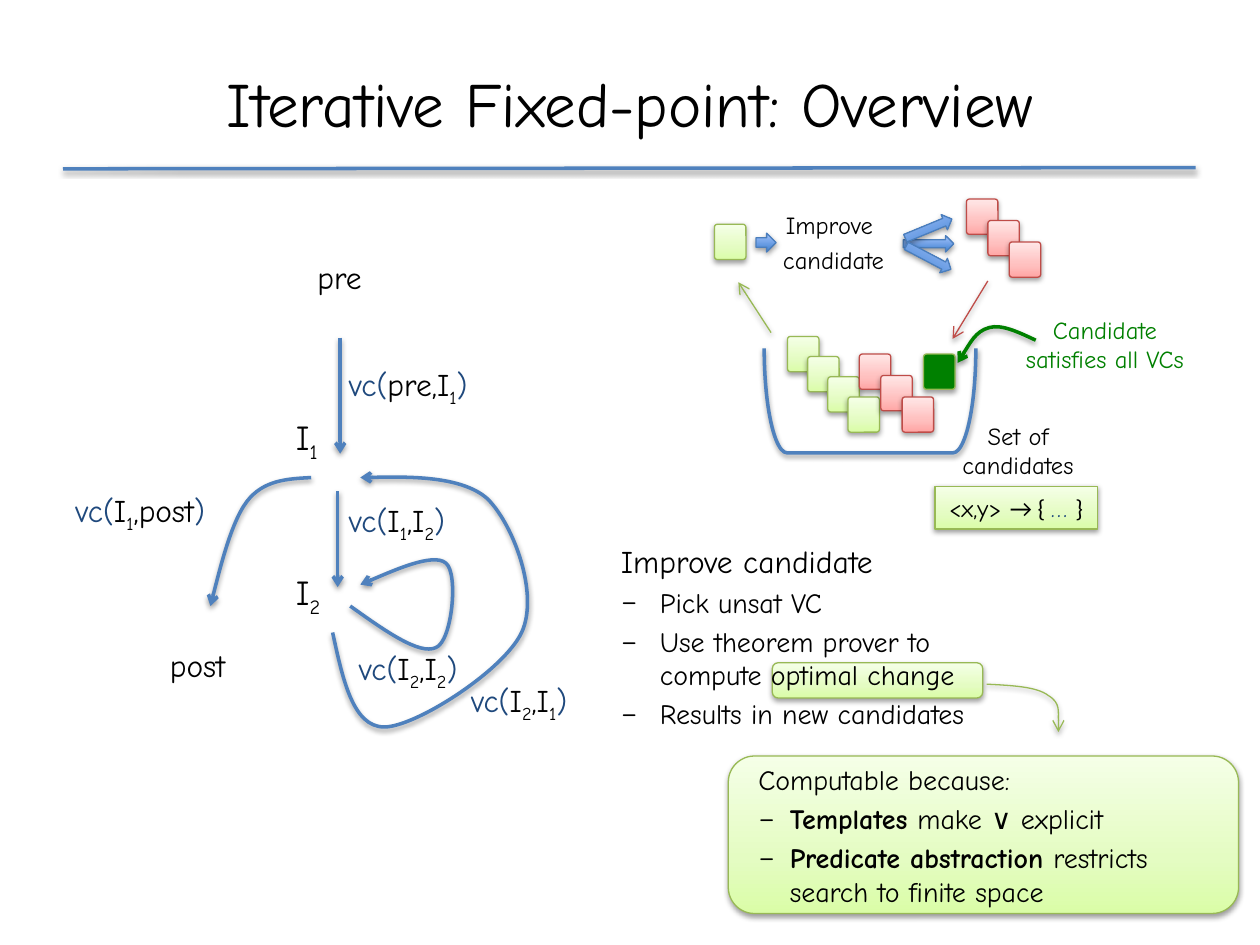
from itertools import groupby

from lxml.etree import SubElement
from pptx import Presentation
from pptx.dml.color import RGBColor
from pptx.enum.shapes import MSO_CONNECTOR, MSO_SHAPE as Shape
from pptx.enum.text import MSO_ANCHOR as Anchor, PP_ALIGN as Align
from pptx.oxml.ns import qn
from pptx.util import Inches, Pt

FONT = "Comic Neue"
BLACK, BLUE, NAVY, DARK_GREEN = "000000", "4F81BD", "1F497D", "008000"
GREEN_EDGE, RED_EDGE, ARROW_EDGE = "98B955", "BF4C48", "4B7EBC"
GREEN = [(0, "DAFDA7"), (35, "E4FCC2"), (100, "F5FFE7")]
RED = [(0, "FFA6A5"), (35, "FFC0BF"), (100, "FFE7E7")]
BLUE_FADE = [(0, "3F80CE"), (100, "A4C4FF")]


def rgb(value):
    return RGBColor.from_string(value)


# Shared drawing helpers
def add_xml(parent, tag, **attributes):
    return SubElement(parent, qn(tag), {k: str(v) for k, v in attributes.items()})


def style_line(part, color, width, arrow=False):
    part.line.color.rgb = rgb(color)
    part.line.width = Pt(width)
    properties = part._element.spPr
    if arrow:
        add_xml(properties.find(qn("a:ln")), "a:tailEnd", type="arrow")
    effects = add_xml(properties, "a:effectLst")
    shadow = add_xml(effects, "a:outerShdw", blurRad=Pt(3.1), dist=Pt(1.6),
                     dir=5400000, rotWithShape=0)
    add_xml(add_xml(shadow, "a:srgbClr", val=BLACK), "a:alpha", val=38000)


def add_block(slide, kind, x, y, w, h, fill, edge, width=0.75, adjust=None, turn=0):
    block = slide.shapes.add_shape(kind, Inches(x), Inches(y), Inches(w), Inches(h))
    block.rotation = turn
    if adjust is not None:
        block.adjustments[0] = adjust
    if fill is None:
        block.fill.background()
    elif isinstance(fill, str):
        block.fill.solid()
        block.fill.fore_color.rgb = rgb(fill)
    else:
        block.fill.gradient()
        block.fill.gradient_angle = 90
        stops = block._element.spPr.find(qn("a:gradFill")).find(qn("a:gsLst"))
        stops.clear()
        for position, color in fill:
            add_xml(add_xml(stops, "a:gs", pos=position * 1000), "a:srgbClr", val=color)
    style_line(block, edge, width)
    return block


def add_straight(slide, x1, y1, x2, y2, color=BLUE, width=2, arrow=True):
    line = slide.shapes.add_connector(
        MSO_CONNECTOR.STRAIGHT, Inches(x1), Inches(y1), Inches(x2), Inches(y2))
    style_line(line, color, width, arrow)


def add_curve(slide, x, y, points, color=BLUE, width=2):
    """Cubic arrow: a start point, then two controls and an end per segment."""
    start, *rest = [(Inches(x + dx), Inches(y + dy)) for dx, dy in points]
    builder = slide.shapes.build_freeform(*start)
    builder.add_line_segments(rest, close=False)
    curve = builder.convert_to_shape()
    outline = curve._element.spPr.find(".//" + qn("a:path"))
    corners = outline.findall(qn("a:lnTo"))
    for i in range(0, len(corners), 3):
        bezier = add_xml(outline, "a:cubicBezTo")
        for corner in corners[i:i + 3]:
            bezier.append(corner[0])
            outline.remove(corner)
    curve.fill.background()
    style_line(curve, color, width, arrow=True)


def add_frame(slide, x, y, w, h, wrap=True, anchor=Anchor.TOP):
    frame = slide.shapes.add_textbox(Inches(x), Inches(y), Inches(w), Inches(h)).text_frame
    frame.word_wrap = wrap
    frame.vertical_anchor = anchor
    return frame


def add_text(frame, content, size=18, color=BLACK, align=Align.LEFT, gap=0,
             margin=0, hang=0, bullet=None):
    """Adds a paragraph; content is a string or a list of (text, run format)."""
    paragraph = frame.paragraphs[0]
    if paragraph.runs:
        paragraph = frame.add_paragraph()
    paragraph.alignment = align
    paragraph.space_before = Pt(size * gap)
    properties = paragraph._p.get_or_add_pPr()
    properties.set("marL", str(Inches(margin)))
    properties.set("indent", str(Inches(-hang)))
    if bullet:
        add_xml(properties, "a:buFont", typeface=FONT)
        add_xml(properties, "a:buChar", char=bullet)
    else:
        add_xml(properties, "a:buNone")
    for words, form in [(content, {})] if isinstance(content, str) else content:
        run = paragraph.add_run()
        run.text = words
        run.font.name = form.get("font", FONT)
        run.font.size = Pt(size)
        run.font.bold = form.get("bold", False)
        run.font.color.rgb = rgb(form.get("color", color))
        if form.get("sub"):
            run._r.get_or_add_rPr().set("baseline", "-25000")


def with_subscripts(words):
    return [("".join(part), {"sub": is_digit}) for is_digit, part in groupby(words, str.isdigit)]


def add_cards(slide, x, y, count, step, fill, edge):
    for i in range(count):
        add_block(slide, Shape.ROUNDED_RECTANGLE, x + i * step, y + i * step,
                  0.25, 0.28, fill, edge, adjust=0.09)


# Regions
def draw_header(slide, x, y):
    add_straight(slide, x, y + 1.04, x + 8.99, y + 1.03, arrow=False)
    title = add_frame(slide, x, y, 9, 1.03, anchor=Anchor.MIDDLE)
    add_text(title, "Iterative Fixed-point: Overview", size=36, align=Align.CENTER)


def draw_explanation(slide, x, y):
    add_block(slide, Shape.ROUNDED_RECTANGLE, x, y, 4.05, 1.25, GREEN, GREEN_EDGE)
    frame = add_frame(slide, x - 0.86, y, 4.83, 1.25)
    layout = dict(size=16, gap=0.2, margin=1.25, hang=0.25)
    add_text(frame, "Computable because:", **layout)
    for term, rest in [("Templates ", "make ∨ explicit"),
                       ("Predicate abstraction ", "restricts search to finite space")]:
        add_text(frame, [(term, {"bold": True}), (rest, {})], bullet="–", **layout)


def draw_flow_graph(slide, x, y):
    # Arrows between program points
    add_straight(slide, x + 2.2, y + 0.68, x + 2.2, y + 1.6)
    add_straight(slide, x + 2.18, y + 1.9, x + 2.18, y + 2.66)
    inner_loop = [(2.28, 2.81), (2.56, 3.01), (2.83, 3.2), (2.96, 3.14),
                  (3.09, 3.09), (3.14, 2.55), (3.04, 2.47),
                  (2.94, 2.38), (2.36, 2.64), (2.36, 2.64)]
    outer_loop = [(2.14, 3.02), (2.22, 3.39), (2.3, 3.77), (2.55, 3.77),
                  (2.8, 3.77), (3.5, 3.32), (3.64, 3.02),
                  (3.78, 2.72), (3.58, 2.17), (3.37, 1.96),
                  (3.15, 1.76), (2.36, 1.79), (2.36, 1.79)]
    exit_path = [(1.97, 1.79), (1.78, 1.8), (1.59, 1.81), (1.46, 1.98),
                 (1.33, 2.15), (1.17, 2.81), (1.17, 2.81)]
    for points in (inner_loop, outer_loop, exit_path):
        add_curve(slide, x, y, points)

    # Program points and invariants
    for words, dx, dy in [("post", 0.75, 3.08), ("pre", 1.92, 0)]:
        add_text(add_frame(slide, x + dx, y + dy, 0.75, 0.4), words)
    for words, dy in [("I1", 1.25), ("I2", 2.48)]:
        frame = add_frame(slide, x + 1.75, y + dy, 0.45, 0.44, wrap=False)
        add_text(frame, with_subscripts(words), size=20)

    # Verification conditions
    for words, dx, dy in [("pre,I1", 2.17, 0.85), ("I1,post", 0, 1.85), ("I1,I2", 2.17, 1.93),
                          ("I2,I2", 2.25, 3.1), ("I2,I1", 3.14, 3.36)]:
        bracket = {"color": NAVY}
        add_text(add_frame(slide, x + dx, y + dy, 1.5, 0.4),
                 [("vc(", bracket), *with_subscripts(words), (")", bracket)])


def draw_steps(slide, x, y):
    # Highlight and its arrow to the explanation
    add_block(slide, Shape.ROUNDED_RECTANGLE, x + 1.3, y + 1.01, 1.67, 0.28, GREEN, GREEN_EDGE)
    add_curve(slide, x, y, [(3, 1.18), (3.2, 1.19), (3.4, 1.2), (3.49, 1.27),
                            (3.59, 1.33), (3.57, 1.56), (3.57, 1.56)], GREEN_EDGE, 0.75)
    frame = add_frame(slide, x, y, 3.4, 1.64)
    add_text(frame, "Improve candidate", gap=0.2, margin=0.38, hang=0.38)
    for step in ("Pick unsat VC", "Use theorem prover to compute optimal change",
                 "Results in new candidates"):
        add_text(frame, step, size=16, gap=0.2, margin=0.31, hang=0.31, bullet="–")


def draw_candidate_cycle(slide, x, y):
    # Pool of candidates
    add_cards(slide, x + 0.58, y + 1.09, 4, 0.16, GREEN, GREEN_EDGE)
    add_block(slide, Shape.RIGHT_BRACKET, x + 0.82, y + 0.76, 0.83, 1.68, None, BLUE,
              width=2, adjust=0.22, turn=90)
    mapping = add_block(slide, Shape.RECTANGLE, x + 1.75, y + 2.28, 1.29, 0.34,
                        GREEN, GREEN_EDGE)
    add_text(mapping.text_frame,
             [("<x,y> ", {}), ("→ { ", {"font": "Calibri"}),
              ("… ", {"color": NAVY}), ("}", {"font": "Calibri"})],
             size=14, align=Align.CENTER)
    add_text(add_frame(slide, x + 1.66, y + 1.71, 1.5, 0.57), "Set of candidates",
             size=14, align=Align.CENTER)

    # Improvement step
    improve = add_frame(slide, x + 0.4, y + 0.04, 1.09, 0.62, wrap=False)
    for word in ("Improve ", "candidate"):
        add_text(improve, word, size=14, align=Align.CENTER, gap=0.2)
    add_cards(slide, x + 2, y, 3, 0.17, RED, RED_EDGE)
    for dx, dy, w, h, turn in [(0.33, 0.27, 0.16, 0.15, 0), (1.5, 0.29, 0.4, 0.13, 0),
                               (1.5, 0.17, 0.4, 0.13, 337.6), (1.5, 0.4, 0.4, 0.13, 27.8)]:
        add_block(slide, Shape.RIGHT_ARROW, x + dx, y + dy, w, h, BLUE_FADE, ARROW_EDGE, turn=turn)

    # Candidate taken out, new candidates put back
    add_cards(slide, x, y + 0.2, 1, 0, GREEN, GREEN_EDGE)
    add_straight(slide, x + 0.45, y + 1.06, x + 0.19, y + 0.66, GREEN_EDGE, 0.75)
    add_cards(slide, x + 1.15, y + 1.23, 3, 0.17, RED, RED_EDGE)
    add_straight(slide, x + 2.17, y + 0.65, x + 1.89, y + 1.11, RED_EDGE, 0.75)

    # Solution
    add_cards(slide, x + 1.66, y + 1.23, 1, 0, DARK_GREEN, GREEN_EDGE)
    add_text(add_frame(slide, x + 2.25, y + 0.87, 1.7, 0.57), "Candidate satisfies all VCs",
             size=14, color=DARK_GREEN, align=Align.CENTER)
    add_curve(slide, x, y, [(2.55, 1.12), (2.42, 1.06), (2.28, 0.99), (2.18, 1.02),
                            (2.07, 1.05), (1.93, 1.3), (1.93, 1.3)], DARK_GREEN)


def main():
    deck = Presentation()
    deck.slide_width, deck.slide_height = Inches(10), Inches(7.5)
    slide = deck.slides.add_slide(deck.slide_layouts[6])
    draw_header(slide, 0.5, 0.3)
    draw_explanation(slide, 5.78, 6)
    draw_flow_graph(slide, 0.5, 2)
    draw_steps(slide, 4.83, 4.25)
    draw_candidate_cycle(slide, 5.67, 1.58)
    deck.save("out.pptx")


if __name__ == "__main__":
    main()
